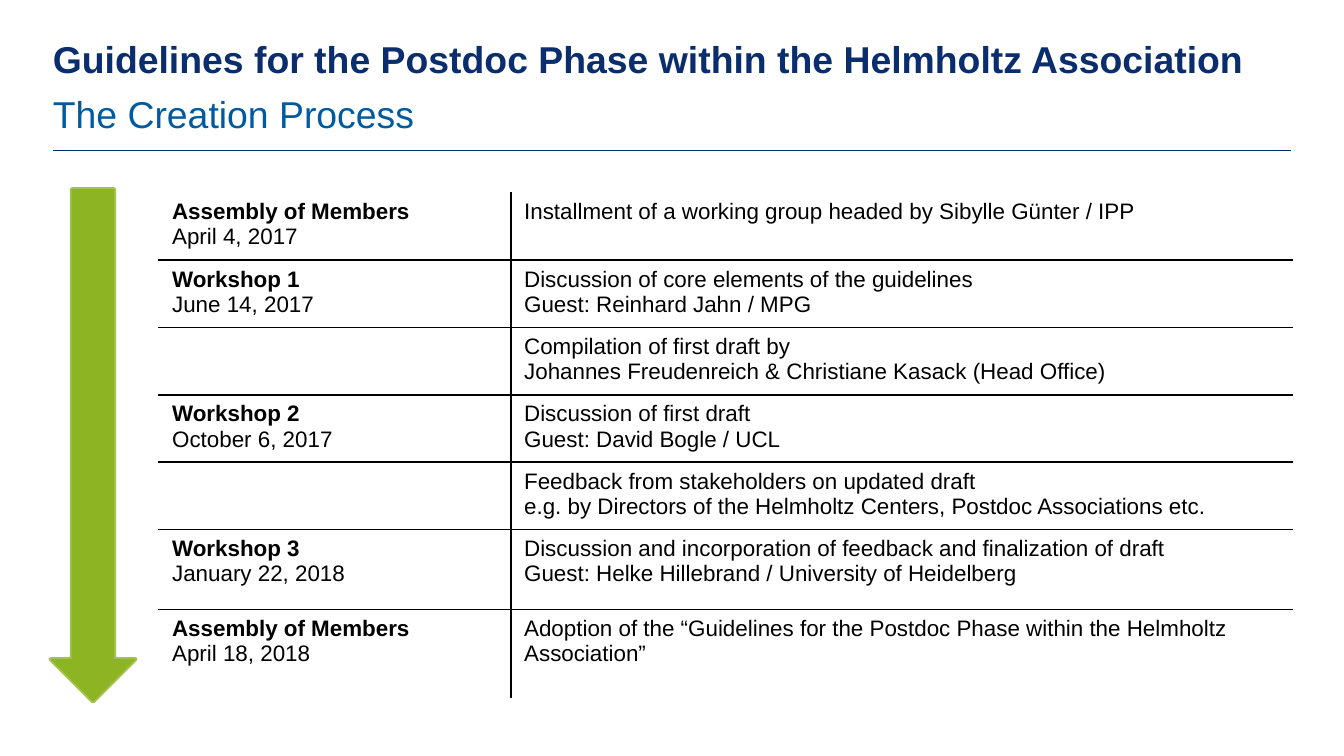
from lxml import etree
from pptx import Presentation
from pptx.dml.color import RGBColor
from pptx.enum.shapes import MSO_CONNECTOR, MSO_SHAPE
from pptx.oxml.ns import qn
from pptx.util import Pt

STRAIGHT = MSO_CONNECTOR.STRAIGHT
DOWN_ARROW = MSO_SHAPE.DOWN_ARROW

NAVY = RGBColor(0x0A, 0x2D, 0x6E)
RULE_NAVY = RGBColor(0x07, 0x2B, 0x6E)
BLUE = RGBColor(0x00, 0x5A, 0xA0)
GREEN = RGBColor(0x8C, 0xB4, 0x23)
BLACK = RGBColor(0, 0, 0)
FONT = "Arial"

COLUMN_WIDTHS = [188.6, 418.4]
ROW_HEIGHTS = [36.1] * 5 + [42.9, 47.6]
STEPS = [
    (["Assembly of Members", "April 4, 2017"],
     ["Installment of a working group headed by Sibylle Günter / IPP"]),
    (["Workshop 1", "June 14, 2017"],
     ["Discussion of core elements of the guidelines", "Guest: Reinhard Jahn / MPG"]),
    ([],
     ["Compilation of first draft by",
      "Johannes Freudenreich & Christiane Kasack (Head Office)"]),
    (["Workshop 2", "October 6, 2017"],
     ["Discussion of first draft", "Guest: David Bogle / UCL"]),
    ([],
     ["Feedback from stakeholders on updated draft",
      "e.g. by Directors of the Helmholtz Centers, Postdoc Associations etc."]),
    (["Workshop 3", "January 22, 2018"],
     ["Discussion and incorporation of feedback and finalization of draft",
      "Guest: Helke Hillebrand / University of Heidelberg"]),
    (["Assembly of Members", "April 18, 2018"],
     ["Adoption of the “Guidelines for the Postdoc Phase within the Helmholtz Association”"]),
]


def style_font(paragraph, size, color, bold=False):
    font = paragraph.font
    font.name = FONT
    font.size = Pt(size)
    font.bold = bold
    font.color.rgb = color


def add_heading(slide, text, top, height, color, bold=False, line_spacing=None):
    shape = slide.shapes.add_textbox(Pt(28.3), Pt(top), Pt(663), Pt(height))
    frame = shape.text_frame
    frame.word_wrap = True
    frame.margin_left = frame.margin_right = frame.margin_top = frame.margin_bottom = 0
    paragraph = frame.paragraphs[0]
    paragraph.text = text
    if line_spacing:
        paragraph.line_spacing = Pt(line_spacing)
    style_font(paragraph, 20, color, bold)


def add_rule(slide):
    rule = slide.shapes.add_connector(STRAIGHT, Pt(28.3), Pt(80.6), Pt(691.7), Pt(80.6))
    rule.line.color.rgb = RULE_NAVY
    rule.line.width = Pt(0.75)
    etree.SubElement(rule._element.spPr, qn("a:effectLst"))


def add_time_arrow(slide):
    arrow = slide.shapes.add_shape(DOWN_ARROW, Pt(27), Pt(101.3), Pt(45.6), Pt(274.6))
    arrow.shadow.inherit = False
    arrow.fill.solid()
    arrow.fill.fore_color.rgb = GREEN
    arrow.line.color.rgb = GREEN
    arrow.line.width = Pt(2)
    color = arrow.line._ln.find(".//" + qn("a:srgbClr"))
    etree.SubElement(color, qn("a:alpha"), val="80000")


def add_border(cell, side):
    properties = cell._tc.get_or_add_tcPr()
    line = etree.SubElement(properties, qn("a:ln" + side), w=str(Pt(1)))
    fill = etree.SubElement(line, qn("a:solidFill"))
    etree.SubElement(fill, qn("a:srgbClr"), val=str(BLACK))


def fill_cell(cell, lines, bold_first):
    cell.text = "\n".join(lines)
    for index, paragraph in enumerate(cell.text_frame.paragraphs):
        style_font(paragraph, 12, BLACK, bold_first and index == 0)


def add_process_table(slide):
    last_row = len(STEPS) - 1
    frame = slide.shapes.add_table(len(STEPS), 2, Pt(85), Pt(103.3),
                                   Pt(sum(COLUMN_WIDTHS)), Pt(sum(ROW_HEIGHTS)))
    table = frame.table
    table.first_row = table.horz_banding = False
    for column, width in zip(table.columns, COLUMN_WIDTHS):
        column.width = Pt(width)
    for row, height in zip(table.rows, ROW_HEIGHTS):
        row.height = Pt(height)
    for row_index, step in enumerate(STEPS):
        for column_index, lines in enumerate(step):
            cell = table.cell(row_index, column_index)
            fill_cell(cell, lines, column_index == 0)
            add_border(cell, "R" if column_index == 0 else "L")
            if row_index > 0:
                add_border(cell, "T")
            if row_index < last_row:
                add_border(cell, "B")
            cell.fill.background()


def main():
    presentation = Presentation()
    presentation.slide_width = Pt(720)
    presentation.slide_height = Pt(405)
    slide = presentation.slides.add_slide(presentation.slide_layouts[6])
    add_rule(slide)
    add_process_table(slide)
    add_heading(slide, "Guidelines for the Postdoc Phase within the Helmholtz Association",
                19.4, 29.5, NAVY, bold=True)
    add_heading(slide, "The Creation Process", 55, 21, BLUE, line_spacing=18)
    add_time_arrow(slide)
    presentation.save("out.pptx")


if __name__ == "__main__":
    main()
